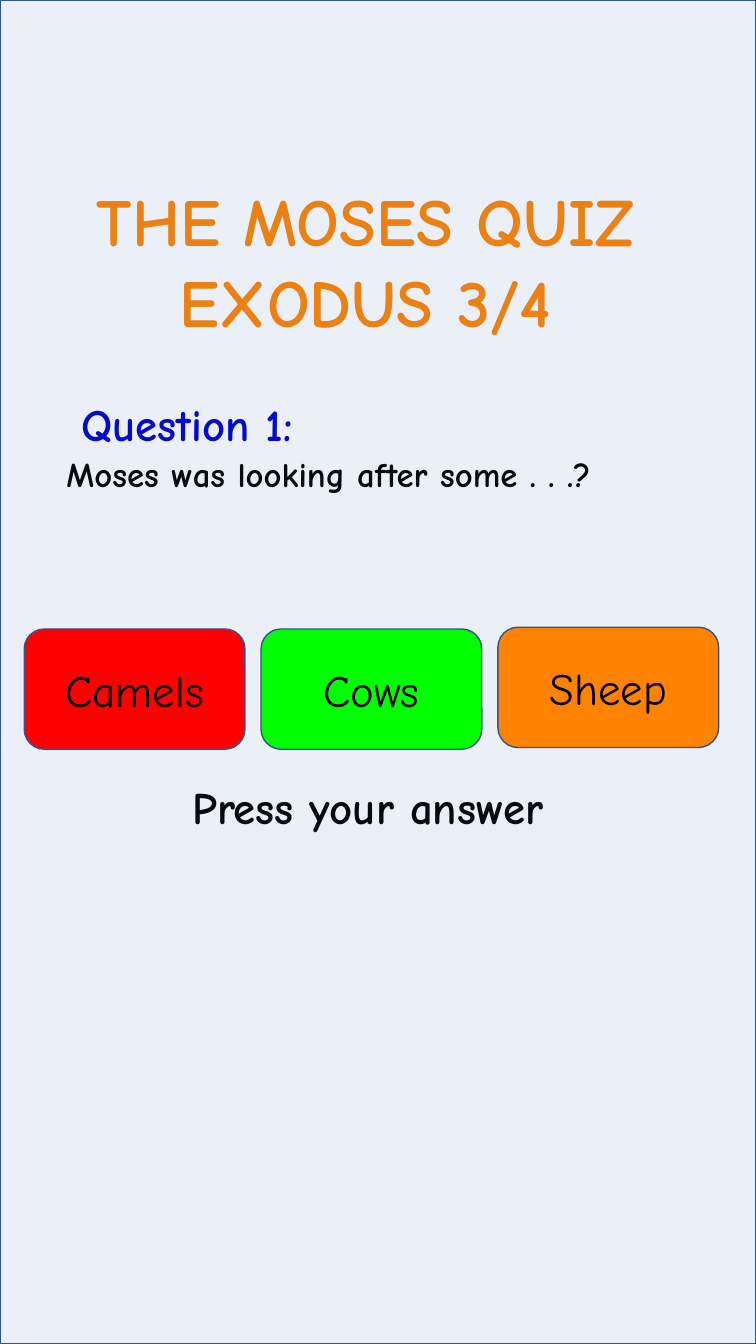
"""Build the first question slide of a Moses quiz."""
from dataclasses import dataclass

from lxml.etree import SubElement
from pptx import Presentation
from pptx.dml.color import RGBColor
from pptx.enum.shapes import MSO_SHAPE
from pptx.enum.text import MSO_ANCHOR, PP_ALIGN
from pptx.oxml.ns import qn
from pptx.shapes.autoshape import Shape
from pptx.slide import Slide
from pptx.text.text import TextFrame
from pptx.util import Inches, Pt

WIDTH, HEIGHT = Inches(7.5), Inches(13.33)
COLUMN, ROW = WIDTH / 100, HEIGHT / 100
FONT = "Comic Neue"

BLACK = RGBColor(0x00, 0x00, 0x00)
ORANGE = RGBColor(0xFF, 0x82, 0x00)
RED = RGBColor(0xFF, 0x00, 0x00)
GREEN = RGBColor(0x00, 0xFF, 0x00)
QUESTION_BLUE = RGBColor(0x00, 0x00, 0xCC)
TINT_BLUE = RGBColor(0x44, 0x72, 0xC4)
BORDER_BLUE = RGBColor(0x32, 0x54, 0x91)
TINT_OPACITY = 10

ANSWER_LEFT, ANSWER_STEP = 3.2, 31.33
ANSWER_WIDTH, ANSWER_HEIGHT = 29.2, 8.95


@dataclass(frozen=True)
class Area:
    """A rectangle in hundredths of the slide's width and height."""

    left: float
    top: float
    width: float
    height: float

    def lengths(self) -> tuple[int, int, int, int]:
        """Give the rectangle in slide units."""
        return (round(self.left * COLUMN), round(self.top * ROW),
                round(self.width * COLUMN), round(self.height * ROW))


@dataclass(frozen=True)
class Caption:
    """A text placed directly on the slide."""

    lines: tuple[str, ...]
    area: Area
    size: float
    color: RGBColor = BLACK
    align: PP_ALIGN = PP_ALIGN.LEFT
    wrap: bool = True
    line_spacing: float = 1.0
    space_before: float = 0


@dataclass(frozen=True)
class Answer:
    """A coloured answer button."""

    label: str
    color: RGBColor
    top: float


CAPTIONS = (
    Caption(("THE MOSES QUIZ ", "EXODUS 3/4 "), Area(4, 12.98, 91.87, 12.9),
            48, ORANGE, PP_ALIGN.CENTER, wrap=False),
    Caption(("Question 1:",), Area(6.27, 29.18, 36.93, 4.8),
            32, QUESTION_BLUE, PP_ALIGN.CENTER, wrap=False),
    Caption(("Moses was looking after some . . .?",), Area(7.47, 34.2, 84.8, 5.4),
            24.8, line_spacing=0.7, space_before=7.5),
    Caption(("Press your answer",), Area(24.13, 58.13, 56.27, 5.4),
            32, line_spacing=0.9, space_before=7.5),
)
ANSWERS = (
    Answer("Camels", RED, 46.8),
    Answer("Cows", GREEN, 46.8),
    Answer("Sheep", ORANGE, 46.67),
)


def write_lines(frame: TextFrame, lines: tuple[str, ...], size: float,
                color: RGBColor, align: PP_ALIGN, bold: bool) -> None:
    """Write one styled paragraph for each line."""
    frame.text = "\n".join(lines)
    for paragraph in frame.paragraphs:
        paragraph.alignment = align
        paragraph.font.name = FONT
        paragraph.font.size = Pt(size)
        paragraph.font.bold = bold
        paragraph.font.color.rgb = color


def add_caption(slide: Slide, caption: Caption) -> None:
    """Add a bold text box."""
    frame = slide.shapes.add_textbox(*caption.area.lengths()).text_frame
    frame.word_wrap = caption.wrap
    write_lines(frame, caption.lines, caption.size, caption.color, caption.align, True)
    for paragraph in frame.paragraphs:
        paragraph.line_spacing = caption.line_spacing
        paragraph.space_before = Pt(caption.space_before)


def add_panel(slide: Slide, preset: MSO_SHAPE, area: Area, color: RGBColor) -> Shape:
    """Add a filled shape with the common border."""
    panel = slide.shapes.add_shape(preset, *area.lengths())
    panel.shadow.inherit = False
    panel.fill.solid()
    panel.fill.fore_color.rgb = color
    panel.line.color.rgb = BORDER_BLUE
    panel.line.width = Pt(1)
    return panel


def add_tint(slide: Slide) -> None:
    """Lay a translucent panel over the whole slide."""
    tint = add_panel(slide, MSO_SHAPE.RECTANGLE, Area(0, 0, 100, 100), TINT_BLUE)
    color = tint.fill._xPr.find(qn("a:solidFill"))[0]
    SubElement(color, qn("a:alpha"), val=str(TINT_OPACITY * 1000))


def add_answer(slide: Slide, answer: Answer, index: int) -> None:
    """Add an answer button in its column."""
    area = Area(ANSWER_LEFT + index * ANSWER_STEP, answer.top,
                ANSWER_WIDTH, ANSWER_HEIGHT)
    button = add_panel(slide, MSO_SHAPE.ROUNDED_RECTANGLE, area, answer.color)
    button.text_frame.vertical_anchor = MSO_ANCHOR.MIDDLE
    write_lines(button.text_frame, (answer.label,), 32, BLACK, PP_ALIGN.CENTER, False)


def main() -> None:
    """Build and save the quiz slide."""
    presentation = Presentation()
    presentation.slide_width, presentation.slide_height = WIDTH, HEIGHT
    slide = presentation.slides.add_slide(presentation.slide_layouts[6])
    for caption in CAPTIONS:
        add_caption(slide, caption)
    add_tint(slide)
    for index, answer in enumerate(ANSWERS):
        add_answer(slide, answer, index)
    presentation.save("out.pptx")


if __name__ == "__main__":
    main()
